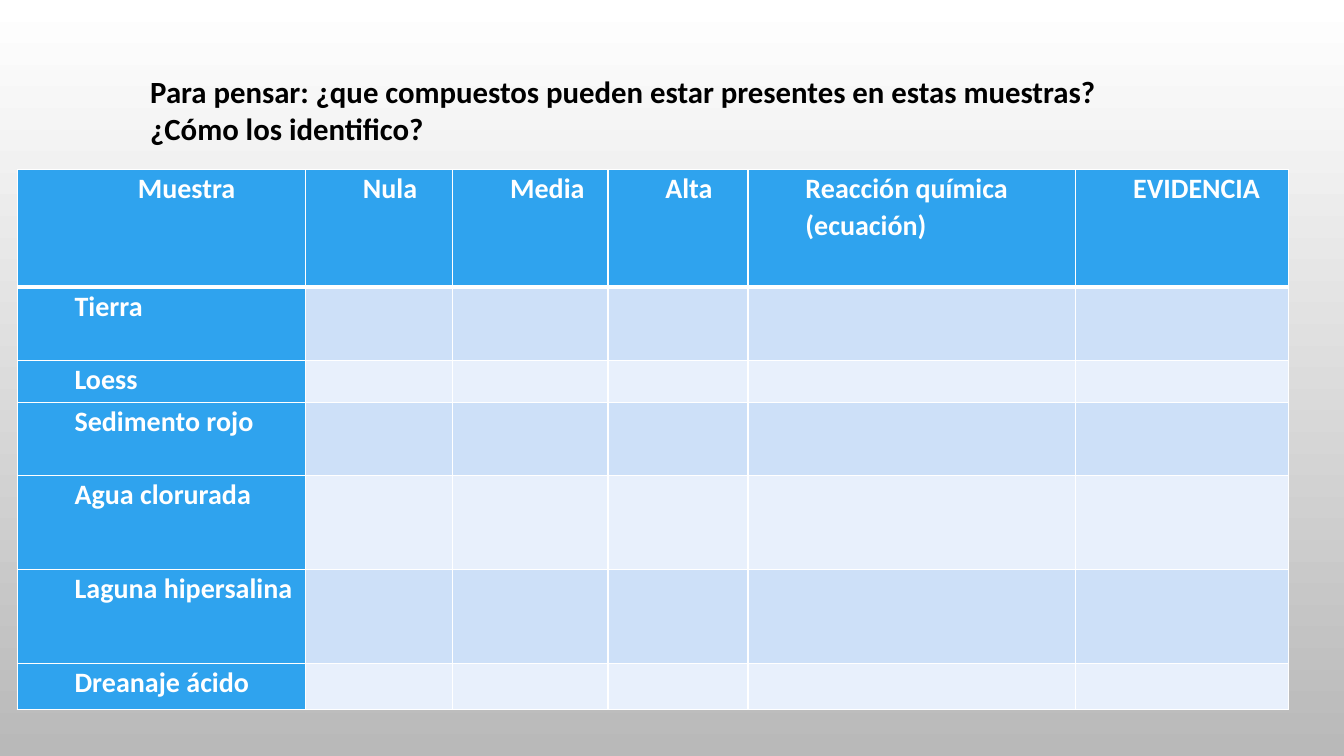
from lxml.etree import SubElement
from pptx import Presentation
from pptx.dml.color import RGBColor
from pptx.enum.text import MSO_ANCHOR, MSO_AUTO_SIZE, PP_ALIGN
from pptx.oxml.ns import qn
from pptx.util import Inches, Pt

TITLE = [
    "Para pensar: ¿que compuestos pueden estar presentes en estas muestras?",
    "¿Cómo los identifico?",
]
HEADS = ["Muestra", "Nula", "Media", "Alta", "Reacción química (ecuación)", "EVIDENCIA"]
SAMPLES = ["Tierra", "Loess", "Sedimento rojo", "Agua clorurada",
           "Laguna hipersalina", "Dreanaje ácido"]
WIDTHS = [2.86, 1.46, 1.54, 1.39, 3.25, 2.11]
HEIGHTS = [1.17, 0.73, 0.41, 0.73, 0.93, 0.93, 0.46]
COLORS = {"head": "2FA3EE", "odd": "CDE0F8", "even": "E8F0FC", "line": "FFFFFF",
          "text": "000000", "top": "FFFFFF", "bottom": "B9B9B9"}
FONT = "Calibri"


def color(name):
    return RGBColor.from_string(COLORS[name])


def write(para, text, size, tint):
    run = para.add_run()
    run.text = text
    font = run.font
    font.name, font.size, font.bold = FONT, Pt(size), True
    font.color.rgb = color(tint)


def border(cell, side, width):
    line = SubElement(cell._tc.get_or_add_tcPr(), qn("a:ln" + side), w=str(Pt(width)))
    fill = SubElement(line, qn("a:solidFill"))
    SubElement(fill, qn("a:srgbClr"), val=COLORS["line"])


def label(cell, text, align):
    para = cell.text_frame.paragraphs[0]
    para._p.get_or_add_pPr().set("marL", str(Inches(0.5)))
    para.alignment = align
    para.line_spacing = 1.07
    write(para, text, 20, "line")


def add_title(slide):
    title = slide.shapes.title
    title.left, title.top = Inches(1.39), Inches(0.67)
    title.width, title.height = Inches(10.1), Inches(0.84)
    frame = title.text_frame
    frame.word_wrap = False
    frame.auto_size = MSO_AUTO_SIZE.NONE
    frame.vertical_anchor = MSO_ANCHOR.TOP
    for i, text in enumerate(TITLE):
        para = frame.add_paragraph() if i else frame.paragraphs[0]
        para.alignment = PP_ALIGN.LEFT
        write(para, text, 22, "text")


def add_grid(slide):
    table = slide.shapes.add_table(
        len(HEIGHTS), len(WIDTHS), Inches(0.17), Inches(1.68),
        Inches(sum(WIDTHS)), Inches(sum(HEIGHTS))).table
    for col, width in zip(table.columns, WIDTHS):
        col.width = Inches(width)
    for row, height in zip(table.rows, HEIGHTS):
        row.height = Inches(height)
    for r in range(len(HEIGHTS)):
        for c in range(len(WIDTHS)):
            cell = table.cell(r, c)
            cell.margin_left = cell.margin_right = Inches(0.07)
            cell.margin_top = cell.margin_bottom = 0
            for side in "LRTB":
                thick = (r, side) in ((0, "B"), (1, "T"))
                border(cell, side, 3 if thick else 1)
            shade = "head" if r == 0 or c == 0 else "odd" if r % 2 else "even"
            cell.fill.solid()
            cell.fill.fore_color.rgb = color(shade)
            if r == 0:
                label(cell, HEADS[c], PP_ALIGN.LEFT if c else PP_ALIGN.CENTER)
            elif c == 0:
                label(cell, SAMPLES[r - 1], PP_ALIGN.JUSTIFY)


def main():
    deck = Presentation()
    deck.slide_width, deck.slide_height = Inches(13.33), Inches(7.5)
    slide = deck.slides.add_slide(deck.slide_layouts[5])
    back = slide.background.fill
    back.gradient()
    back.gradient_angle = 270
    for stop, name in zip(back.gradient_stops, ("top", "bottom")):
        stop.color.rgb = color(name)
    add_grid(slide)
    add_title(slide)
    deck.save("out.pptx")


if __name__ == "__main__":
    main()
